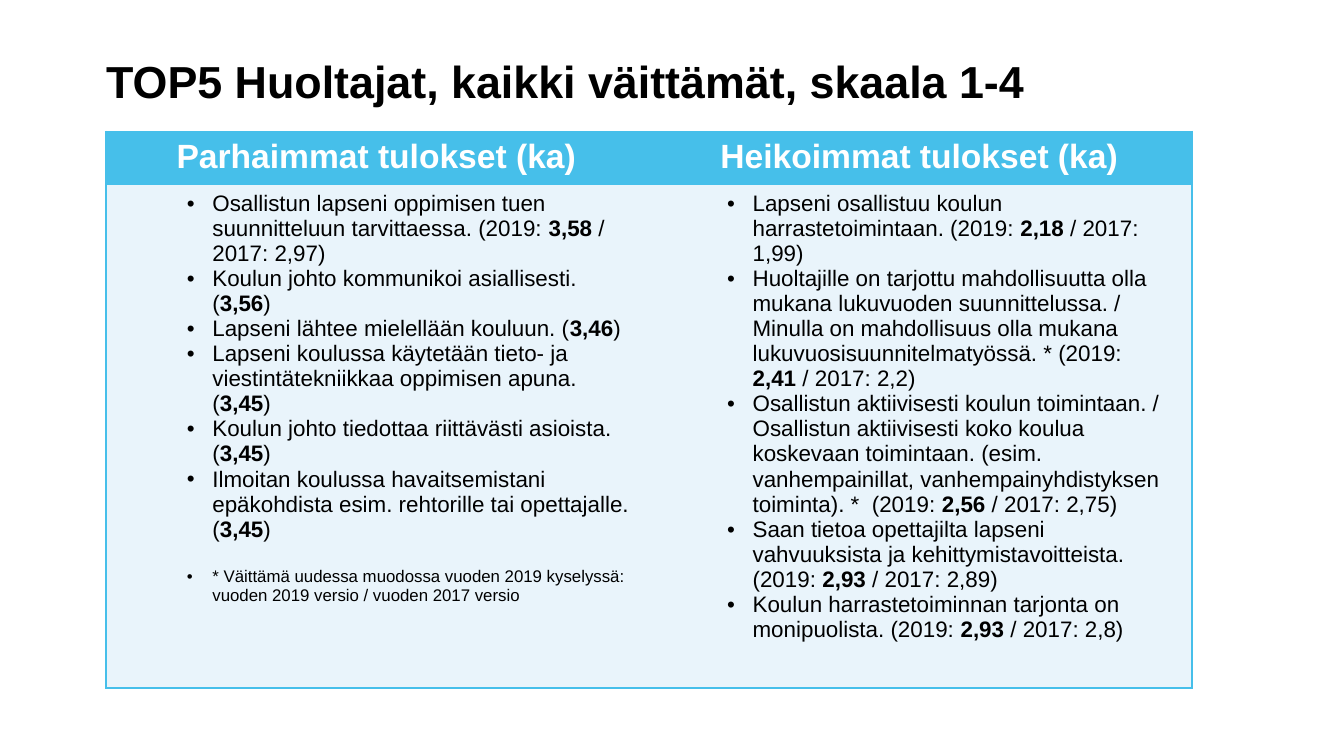
from dataclasses import dataclass

from lxml.etree import SubElement
from pptx import Presentation
from pptx.dml.color import RGBColor
from pptx.enum.text import MSO_ANCHOR, MSO_AUTO_SIZE, PP_ALIGN
from pptx.oxml.ns import qn
from pptx.util import Inches, Pt


@dataclass(frozen=True)
class Theme:
    font: str = "Arial"
    text: str = "000000"
    header_text: str = "FFFFFF"
    accent: str = "46BFEA"
    panel: str = "E9F4FB"
    title_size: float = 24
    header_size: float = 18
    body_size: float = 12
    note_size: float = 9


THEME = Theme()
NO_STYLE_NO_GRID = "{2D5ABB26-0587-4C30-8999-92F81FD0307C}"

TITLE = "TOP5 Huoltajat, kaikki väittämät, skaala 1-4"
HEADERS = ["Parhaimmat tulokset (ka)", "Heikoimmat tulokset (ka)"]

# Double asterisks enclose the bold scores
BEST = [
    "Osallistun lapseni oppimisen tuen suunnitteluun tarvittaessa. (2019: **3,58 **/ 2017: 2,97)",
    "Koulun johto kommunikoi asiallisesti. (**3,56**)",
    "Lapseni lähtee mielellään kouluun. (**3,46**)",
    "Lapseni koulussa käytetään tieto- ja viestintätekniikkaa oppimisen apuna. (**3,45**)",
    "Koulun johto tiedottaa riittävästi asioista. (**3,45**)",
    "Ilmoitan koulussa havaitsemistani epäkohdista esim. rehtorille tai opettajalle. (**3,45**)",
]
NOTE = "* Väittämä uudessa muodossa vuoden 2019 kyselyssä: vuoden 2019 versio / vuoden 2017 versio"
WEAKEST = [
    "Lapseni osallistuu koulun harrastetoimintaan. (2019: **2,18 **/ 2017: 1,99)",
    "Huoltajille on tarjottu mahdollisuutta olla mukana lukuvuoden suunnittelussa. / "
    "Minulla on mahdollisuus olla mukana lukuvuosisuunnitelmatyössä. * (2019: **2,41 **/ 2017: 2,2)",
    "Osallistun aktiivisesti koulun toimintaan. / Osallistun aktiivisesti koko koulua "
    "koskevaan toimintaan. (esim. vanhempainillat, vanhempainyhdistyksen toiminta). *  "
    "(2019: **2,56 **/ 2017: 2,75)",
    "Saan tietoa opettajilta lapseni vahvuuksista ja kehittymistavoitteista. "
    "(2019: **2,93 **/ 2017: 2,89)",
    "Koulun harrastetoiminnan tarjonta on monipuolista. (2019: **2,93** / 2017: 2,8)",
]


def write_text(paragraph, text, *, size, color=THEME.text, bold=False,
               align=PP_ALIGN.LEFT, space_before=0):
    """Write text into a paragraph; parts between double asterisks are bold."""
    paragraph.alignment = align
    paragraph.space_before = Pt(space_before)
    for index, part in enumerate(text.split("**")):
        run = paragraph.add_run()
        run.text = part
        run.font.name = THEME.font
        run.font.size = Pt(size)
        run.font.bold = bold or index % 2 == 1
        run.font.color.rgb = RGBColor.from_string(color)


def add_bullet(paragraph):
    paragraph.level = 1
    properties = paragraph._p.get_or_add_pPr()
    properties.set("marL", str(Inches(0.69)))
    properties.set("indent", str(Inches(-0.19)))
    SubElement(properties, qn("a:buFont")).set("typeface", THEME.font)
    SubElement(properties, qn("a:buChar")).set("char", "•")


def write_list(cell, items, note=None):
    frame = cell.text_frame
    for index, item in enumerate(items):
        paragraph = frame.add_paragraph() if index else frame.paragraphs[0]
        write_text(paragraph, item, size=THEME.body_size)
        add_bullet(paragraph)
    if note:
        paragraph = frame.add_paragraph()
        write_text(paragraph, note, size=THEME.note_size, space_before=13.5)
        add_bullet(paragraph)


def format_cell(cell, fill, sides):
    """Draw the given border sides (in L, R, T, B order), then fill the cell."""
    properties = cell._tc.get_or_add_tcPr()
    for side in sides:
        line = SubElement(properties, qn(f"a:ln{side}"), w=str(Pt(1)))
        solid = SubElement(line, qn("a:solidFill"))
        SubElement(solid, qn("a:srgbClr")).set("val", THEME.accent)
    cell.fill.solid()
    cell.fill.fore_color.rgb = RGBColor.from_string(fill)


def set_title(slide):
    title = slide.shapes.title
    title.left, title.top = Inches(0.79), Inches(0.08)
    title.width, title.height = Inches(8.05), Inches(0.72)
    frame = title.text_frame
    frame.auto_size = MSO_AUTO_SIZE.NONE
    frame.word_wrap = True
    frame.vertical_anchor = MSO_ANCHOR.BOTTOM
    frame.margin_left = frame.margin_top = frame.margin_bottom = 0
    frame.margin_right = Inches(0.1)
    paragraph = frame.paragraphs[0]
    write_text(paragraph, TITLE, size=THEME.title_size, bold=True)
    paragraph.line_spacing = Pt(33)


def add_results_table(slide):
    widths, heights = [4.02, 4.06], [0.39, 3.75]
    table = slide.shapes.add_table(
        2, 2, Inches(0.79), Inches(0.98), Inches(sum(widths)), Inches(sum(heights))
    ).table
    table._tbl.tblPr.find(qn("a:tableStyleId")).text = NO_STYLE_NO_GRID
    table.horz_banding = False
    for column, width in zip(table.columns, widths):
        column.width = Inches(width)
    for row, height in zip(table.rows, heights):
        row.height = Inches(height)

    # Header row and outer frame
    for column, (header, sides) in enumerate(zip(HEADERS, ["LTB", "RTB"])):
        format_cell(table.cell(0, column), THEME.accent, sides)
        format_cell(table.cell(1, column), THEME.panel, sides)
        write_text(table.cell(0, column).text_frame.paragraphs[0], header,
                   size=THEME.header_size, color=THEME.header_text, bold=True,
                   align=PP_ALIGN.CENTER)

    # Result lists
    write_list(table.cell(1, 0), BEST, note=NOTE)
    write_list(table.cell(1, 1), WEAKEST)


def main():
    presentation = Presentation()
    # Widescreen page, 16:9
    presentation.slide_width = Inches(10)
    presentation.slide_height = Inches(10 * 9 / 16)
    slide = presentation.slides.add_slide(presentation.slide_layouts.get_by_name("Title Only"))
    set_title(slide)
    add_results_table(slide)
    presentation.save("out.pptx")


if __name__ == "__main__":
    main()
